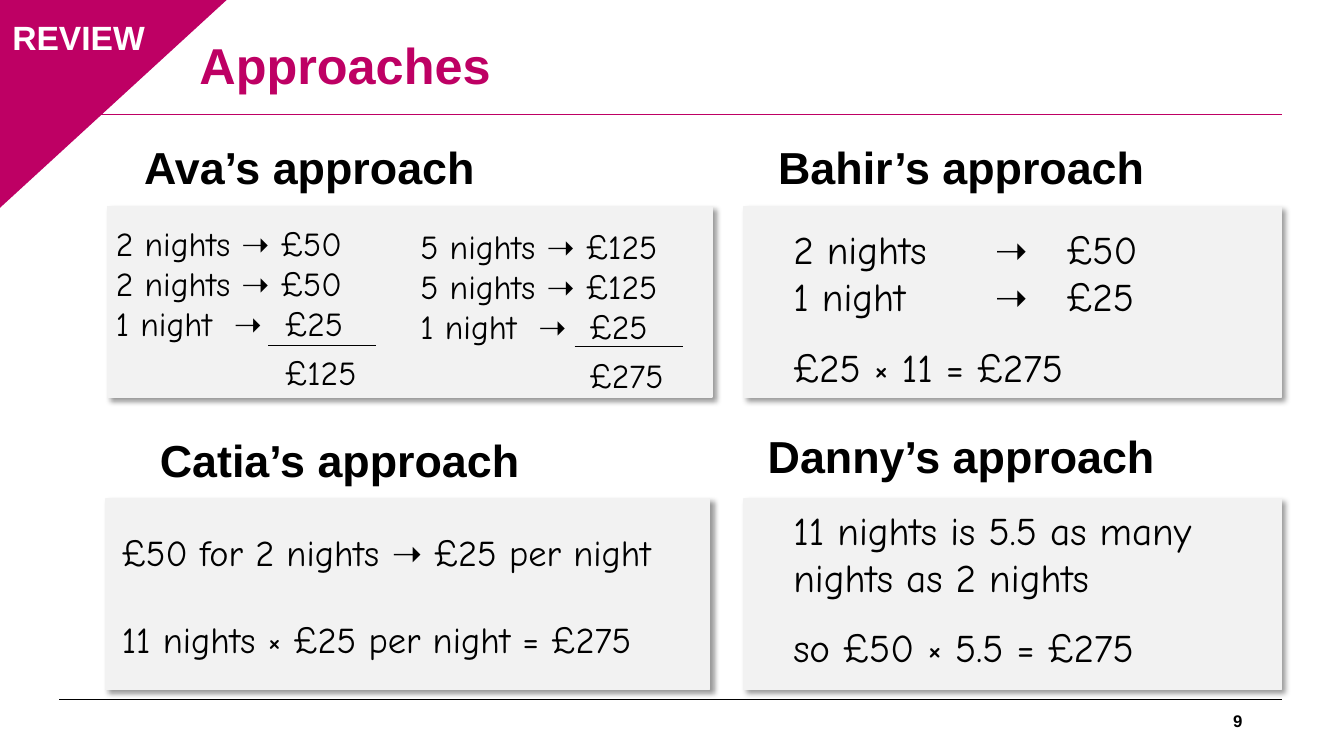
from lxml.etree import SubElement
from pptx import Presentation
from pptx.dml.color import RGBColor
from pptx.enum.shapes import MSO_CONNECTOR, MSO_SHAPE
from pptx.enum.text import MSO_ANCHOR, PP_ALIGN
from pptx.oxml.ns import qn
from pptx.util import Pt

PX = 9144  # 100 px to the inch
MAGENTA, BLACK, WHITE, PANEL_GREY = "BE0064", "000000", "FFFFFF", "F2F2F2"
color = RGBColor.from_string


def add_text(shapes, paragraphs, box_px, size, font="Arial", ink=BLACK, bold=False,
             align=PP_ALIGN.LEFT, anchor=MSO_ANCHOR.TOP, preset=None, fill=WHITE):
    """Add a text box, or a filled preset shape; each paragraph is (text, format dict)."""
    place = [n * PX for n in box_px]
    if preset is None:
        box = shapes.add_textbox(*place)
    else:
        box = shapes.add_shape(preset, *place)
        box.shadow.inherit = False
        box.fill.solid()
        box.fill.fore_color.rgb = color(fill)
        box.line.fill.background()
    frame = box.text_frame
    frame.word_wrap = True
    frame.vertical_anchor = anchor
    for index, (text, layout) in enumerate(paragraphs):
        para = frame.add_paragraph() if index else frame.paragraphs[0]
        para.alignment = align
        para.line_spacing = layout.get("spacing", 1.0)
        para.space_before = Pt(layout.get("before", 0))
        if "tabs" in layout:
            tab_list = SubElement(para._p.get_or_add_pPr(), qn("a:tabLst"))
            for stop in layout["tabs"]:
                SubElement(tab_list, qn("a:tab"), pos=str(stop * PX), algn="l")
        span = para.add_run()
        span.text = text
        span.font.name = font
        span.font.size = Pt(size)
        span.font.bold = bold
        span.font.color.rgb = color(ink)


def add_line(shapes, left, right, y, ink, width):
    """Add a horizontal rule."""
    rule = shapes.add_connector(MSO_CONNECTOR.STRAIGHT, left * PX, y * PX, right * PX, y * PX)
    rule.line.color.rgb = color(ink)
    rule.line.width = Pt(width)
    SubElement(rule._element.spPr, qn("a:effectLst"))


deck = Presentation()
deck.slide_width, deck.slide_height = 1333 * PX, 750 * PX
page = deck.slides.add_slide(deck.slide_layouts[6])
shapes = page.shapes

# Page frame
add_line(shapes, 59, 1272, 694, BLACK, 0.75)
add_line(shapes, 59, 1272, 114, MAGENTA, 0.75)
add_text(shapes, [("Approaches", {"spacing": 0.9})], (188, 12, 1000, 111), 36,
         ink=MAGENTA, bold=True, anchor=MSO_ANCHOR.MIDDLE)
add_text(shapes, [("9", {})], (942, 695, 300, 40), 12, bold=True,
         align=PP_ALIGN.RIGHT, anchor=MSO_ANCHOR.MIDDLE)

# Review corner
corner = shapes.add_shape(MSO_SHAPE.ISOSCELES_TRIANGLE, -3 * PX, -2 * PX, 229 * PX, 210 * PX)
corner.adjustments[0] = 0
corner._element.spPr.xfrm.set("flipV", "1")
corner.shadow.inherit = False
corner.fill.solid()
corner.fill.fore_color.rgb = color(MAGENTA)
corner.line.color.rgb = color(MAGENTA)
corner.line.width = Pt(1)
add_text(shapes, [("REVIEW", {})], (1, 12, 154, 44), 24, ink=WHITE, bold=True,
         align=PP_ALIGN.CENTER, preset=MSO_SHAPE.RECTANGLE, fill=MAGENTA)

# Headings and shadowed panels: name, heading left, top, width, panel left, top, width
approaches = [
    ("Ava", 105, 130, 404, 107, 205, 599),
    ("Bahir", 738, 130, 431, 738, 205, 533),
    ("Catia", 105, 420, 464, 105, 495, 599),
    ("Danny", 738, 416, 431, 738, 495, 533),
]
for name, head_left, head_top, head_width, left, top, width in approaches:
    add_text(shapes, [(f"{name}’s approach", {})], (head_left, head_top, head_width, 71), 32,
             bold=True, align=PP_ALIGN.CENTER, anchor=MSO_ANCHOR.MIDDLE,
             preset=MSO_SHAPE.ROUNDED_RECTANGLE)
    panel = shapes.add_shape(MSO_SHAPE.RECTANGLE, left * PX, top * PX, width * PX, 189 * PX)
    panel.fill.solid()
    panel.fill.fore_color.rgb = color(PANEL_GREY)
    panel.line.color.rgb = color(PANEL_GREY)
    panel.line.width = Pt(1)
    effects = SubElement(panel._element.spPr, qn("a:effectLst"))
    shadow = SubElement(effects, qn("a:outerShdw"), blurRad=str(Pt(4)), dist=str(Pt(3)),
                        dir="2700000", algn="tl", rotWithShape="0")
    shade = SubElement(shadow, qn("a:srgbClr"), val=BLACK)
    SubElement(shade, qn("a:alpha"), val="40000")

# Ava's two sums, each grouped with its total line
sums = [
    (105, 216, "2 nights ➝ £50", "£125", 266, 343),
    (407, 219, "5 nights ➝ £125", "£275", 570, 344),
]
for left, top, step, total, rule_left, rule_y in sums:
    group = shapes.add_group_shape()
    working = [
        (step, {}),
        (step, {}),
        ("1 night\t➝\t£25", {"tabs": [117, 168]}),
        (f"\t{total}", {"tabs": [168], "before": 6}),
    ]
    add_text(group.shapes, working, (left, top, 315, 180), 24, font="Comic Neue")
    add_line(group.shapes, rule_left, rule_left + 107, rule_y, BLACK, 1)

# The other three workings
rate_tabs = {"tabs": [200, 271]}
workings = [
    ((777, 219, 494, 167), 28, [
        ("2 nights\t➝\t£50", rate_tabs),
        ("1 night\t➝\t£25", rate_tabs),
        ("£25 × 11 = £275", {"spacing": 1.5}),
    ]),
    ((111, 521, 617, 129), 26, [
        ("£50 for 2 nights ➝ £25 per night", {}),
        ("11 nights × £25 per night = £275", {"spacing": 2.0}),
    ]),
    ((777, 497, 494, 167), 28, [
        ("11 nights is 5.5 as many nights as 2 nights", {}),
        ("so £50 × 5.5 = £275", {"spacing": 1.5}),
    ]),
]
for box_px, size, working in workings:
    add_text(shapes, working, box_px, size, font="Comic Neue")

deck.save("out.pptx")
